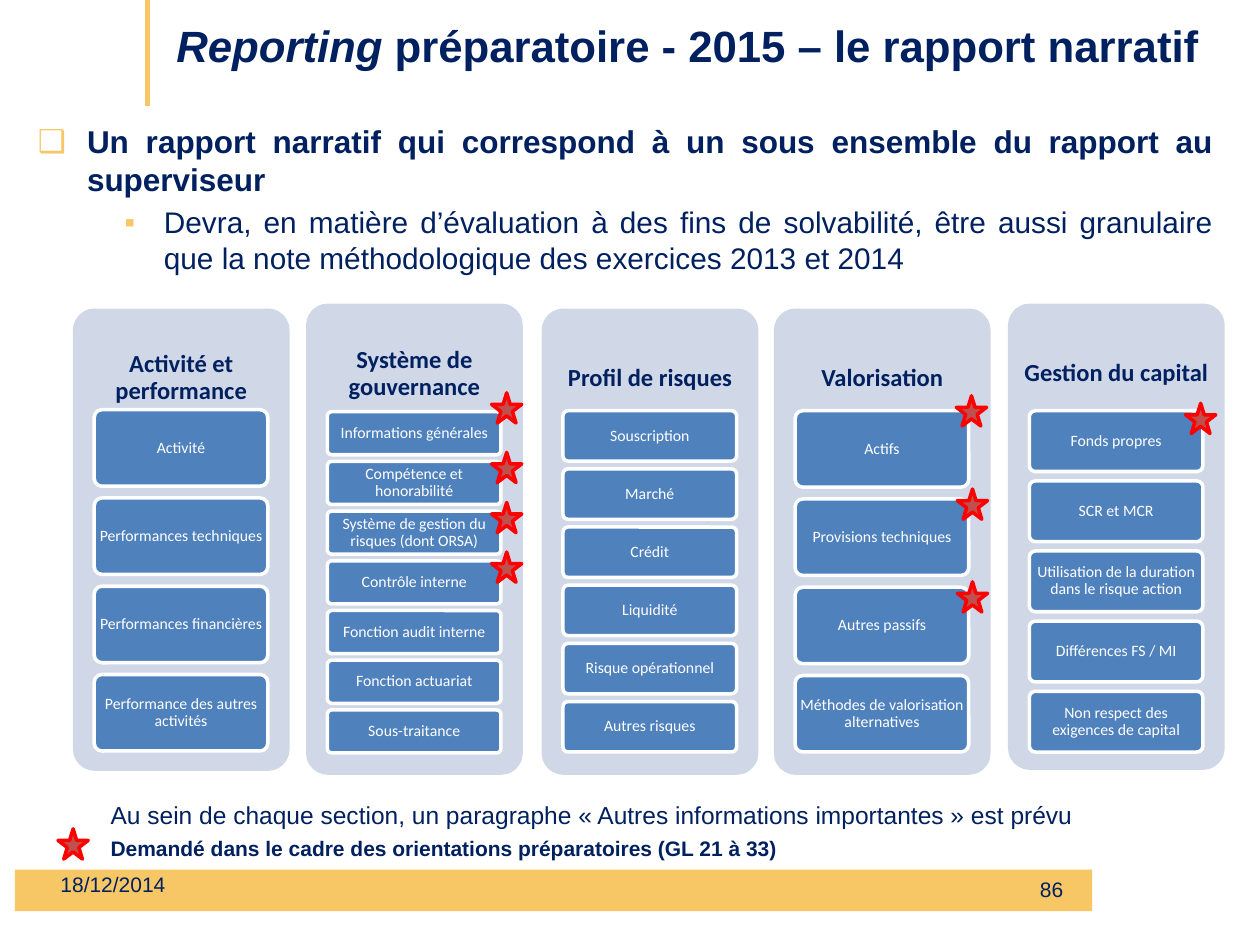
from dataclasses import dataclass

from lxml.etree import SubElement
from pptx import Presentation
from pptx.dml.color import RGBColor
from pptx.enum.shapes import MSO_CONNECTOR, MSO_SHAPE as Shape
from pptx.enum.text import MSO_ANCHOR as Anchor, MSO_AUTO_SIZE as Fit, PP_ALIGN as Align
from pptx.oxml.ns import qn
from pptx.util import Cm, Pt

NAVY = RGBColor(0x00, 0x20, 0x60)
GOLD = RGBColor(0xF7, 0xC7, 0x65)
PALE = RGBColor(0xD0, 0xD8, 0xE8)
BLUE = RGBColor(0x4F, 0x81, 0xBD)
BRICK = RGBColor(0xC0, 0x50, 0x4D)
RED = RGBColor(0xFF, 0x00, 0x00)
WHITE = RGBColor(0xFF, 0xFF, 0xFF)

# All lengths are in centimetres
PANEL_W, BOX_W, BOX_DX = 4.37, 3.5, 0.43
STACK_H = 6.88      # height shared by the boxes of a panel
GAP = 2 / 13        # gap between boxes, as a share of box height
STAR = 0.61


@dataclass
class Panel:
    head: str
    left: float
    top: float
    height: float
    start: float
    items: list[str]


@dataclass
class Note:
    text: str
    left: float
    top: float
    width: float
    height: float
    size: float
    bold: bool = False
    align: Align = Align.LEFT
    anchor: Anchor = Anchor.TOP


PANELS = [
    Panel("Activité et performance", 1.47, 6.22, 9.32, 8.26,
          ["Activité", "Performances techniques", "Performances financières",
           "Performance des autres activités"]),
    Panel("Système de gouvernance", 6.17, 6.12, 9.5, 8.3,
          ["Informations générales", "Compétence et honorabilité",
           "Système de gestion du risques (dont ORSA)", "Contrôle interne",
           "Fonction audit interne", "Fonction actuariat", "Sous-traitance"]),
    Panel("Profil de risques", 10.92, 6.22, 9.4, 8.28,
          ["Souscription", "Marché", "Crédit", "Liquidité",
           "Risque opérationnel", "Autres risques"]),
    Panel("Valorisation", 15.6, 6.22, 9.4, 8.28,
          ["Actifs", "Provisions techniques", "Autres passifs",
           "Méthodes de valorisation alternatives"]),
    Panel("Gestion du capital", 20.32, 6.12, 9.4, 8.28,
          ["Fonds propres", "SCR et MCR",
           "Utilisation de la duration dans le risque action",
           "Différences FS / MI", "Non respect des exigences de capital"]),
]

STARS = [
    (9.91, 7.92), (9.91, 9.12), (9.91, 10.13), (9.91, 11.13),
    (19.28, 7.98), (19.3, 9.86), (19.3, 11.73),
    (23.9, 8.13),
    (1.17, 16.71),  # legend
]

NOTES = [
    Note("Au sein de chaque section, un paragraphe « Autres informations importantes » est prévu",
         1.98, 16, 20.19, 0.99, 14, align=Align.JUSTIFY),
    Note("Demandé dans le cadre des orientations préparatoires (GL 21 à 33)",
         1.98, 16.71, 14.71, 0.99, 12, True, Align.JUSTIFY),
    Note("18/12/2014", 0.97, 17.32, 5.92, 1.02, 12, anchor=Anchor.MIDDLE),
    Note("86", 20.5, 17.53, 1.4, 0.79, 12, align=Align.CENTER, anchor=Anchor.MIDDLE),
]


def place(shape, left: float, top: float, width: float, height: float) -> None:
    shape.left, shape.top = Cm(left), Cm(top)
    shape.width, shape.height = Cm(width), Cm(height)


def style(para, size: float, color=NAVY, bold=False, face="Arial") -> None:
    for run in para.runs:
        font = run.font
        font.name, font.size, font.bold = face, Pt(size), bold
        font.color.rgb = color


def draw(slide, kind, left: float, top: float, width: float, height: float,
         fill, line=None):
    shape = slide.shapes.add_shape(kind, Cm(left), Cm(top), Cm(width), Cm(height))
    shape.shadow.inherit = False
    shape.fill.solid()
    shape.fill.fore_color.rgb = fill
    if line is None:
        shape.line.fill.background()
    else:
        shape.line.color.rgb = line
        shape.line.width = Pt(2)
    if kind == Shape.ROUNDED_RECTANGLE:
        shape.adjustments[0] = 0.1
    return shape


def label(shape, text: str, size: float, color, bold: bool,
          side: float, edge: float) -> None:
    frame = shape.text_frame
    frame.text = text
    frame.word_wrap = True
    frame.vertical_anchor = Anchor.MIDDLE
    frame.margin_left = frame.margin_right = Cm(side)
    frame.margin_top = frame.margin_bottom = Cm(edge)
    para = frame.paragraphs[0]
    para.alignment = Align.CENTER
    para.line_spacing = 0.9
    style(para, size, color, bold, "Calibri")


def draw_panel(slide, panel: Panel) -> None:
    draw(slide, Shape.ROUNDED_RECTANGLE, panel.left, panel.top, PANEL_W, panel.height, PALE)
    head = slide.shapes.add_textbox(Cm(panel.left), Cm(panel.top),
                                    Cm(PANEL_W), Cm(0.3 * panel.height))
    label(head, panel.head, 14, NAVY, True, 0.15, 0.15)
    count = len(panel.items)
    height = STACK_H / (count + (count - 1) * GAP)
    for i, item in enumerate(panel.items):
        box = draw(slide, Shape.ROUNDED_RECTANGLE, panel.left + BOX_DX,
                   panel.start + i * height * (1 + GAP), BOX_W, height, BLUE, WHITE)
        label(box, item, 9, WHITE, False, 0.06, 0.05)


def draw_note(slide, note: Note) -> None:
    box = slide.shapes.add_textbox(Cm(note.left), Cm(note.top), Cm(note.width), Cm(note.height))
    frame = box.text_frame
    frame.text = note.text
    frame.word_wrap = True
    frame.vertical_anchor = note.anchor
    para = frame.paragraphs[0]
    para.alignment = note.align
    style(para, note.size, bold=note.bold)


def bullet(para, mark: str, left: float, hang: float) -> None:
    props = para._p.get_or_add_pPr()
    props.set("marL", str(Cm(left)))
    props.set("indent", str(-Cm(hang)))
    color = SubElement(props, qn("a:buClr"))
    SubElement(color, qn("a:srgbClr"), val=str(GOLD))
    SubElement(props, qn("a:buFont"), typeface="Arial")
    SubElement(props, qn("a:buChar"), char=mark)


def main() -> None:
    deck = Presentation()
    deck.slide_width, deck.slide_height = Cm(25.4), Cm(19.05)
    slide = deck.slides.add_slide(deck.slide_layouts[1])

    # Gold rule and footer band
    rule = slide.shapes.add_connector(MSO_CONNECTOR.STRAIGHT, Cm(2.97), 0, Cm(2.97), Cm(2.13))
    rule.line.color.rgb = GOLD
    rule.line.width = Pt(2.75)
    SubElement(rule._element.spPr, qn("a:effectLst"))
    draw(slide, Shape.RECTANGLE, 0.3, 17.53, 21.72, 0.84, GOLD)

    # Title
    title = slide.shapes.title
    place(title, 3.3, -0.08, 21.79, 1.98)
    title.text_frame.auto_size = Fit.NONE
    title.text_frame.vertical_anchor = Anchor.MIDDLE
    para = title.text_frame.paragraphs[0]
    para.text = "Reporting"
    para.add_run().text = " préparatoire - 2015 – le rapport narratif"
    para.alignment = Align.JUSTIFY
    style(para, 25, bold=True)
    para.runs[0].font.italic = True

    # Body list
    body = slide.placeholders[1]
    place(body, 0.51, 2.34, 24.21, 1.6)
    frame = body.text_frame
    frame.auto_size = Fit.NONE
    first, second = frame.paragraphs[0], frame.add_paragraph()
    first.text = "Un rapport narratif qui correspond à un sous ensemble du rapport au superviseur"
    second.text = ("Devra, en matière d’évaluation à des fins de solvabilité, être aussi "
                   "granulaire que la note méthodologique des exercices 2013 et 2014")
    second.level = 1
    bullet(first, "❑", 0.99, 0.99)
    bullet(second, "▪", 2.54, 0.79)
    first.alignment = second.alignment = Align.JUSTIFY
    first.space_before, second.space_before = Pt(0), Pt(3.4)
    style(first, 18, bold=True)
    style(second, 17)

    # Report sections, stars and notes
    for panel in PANELS:
        draw_panel(slide, panel)
    for left, top in STARS:
        draw(slide, Shape.STAR_5_POINT, left, top, STAR, STAR, BRICK, RED)
    for note in NOTES:
        draw_note(slide, note)

    deck.save("out.pptx")


if __name__ == "__main__":
    main()
